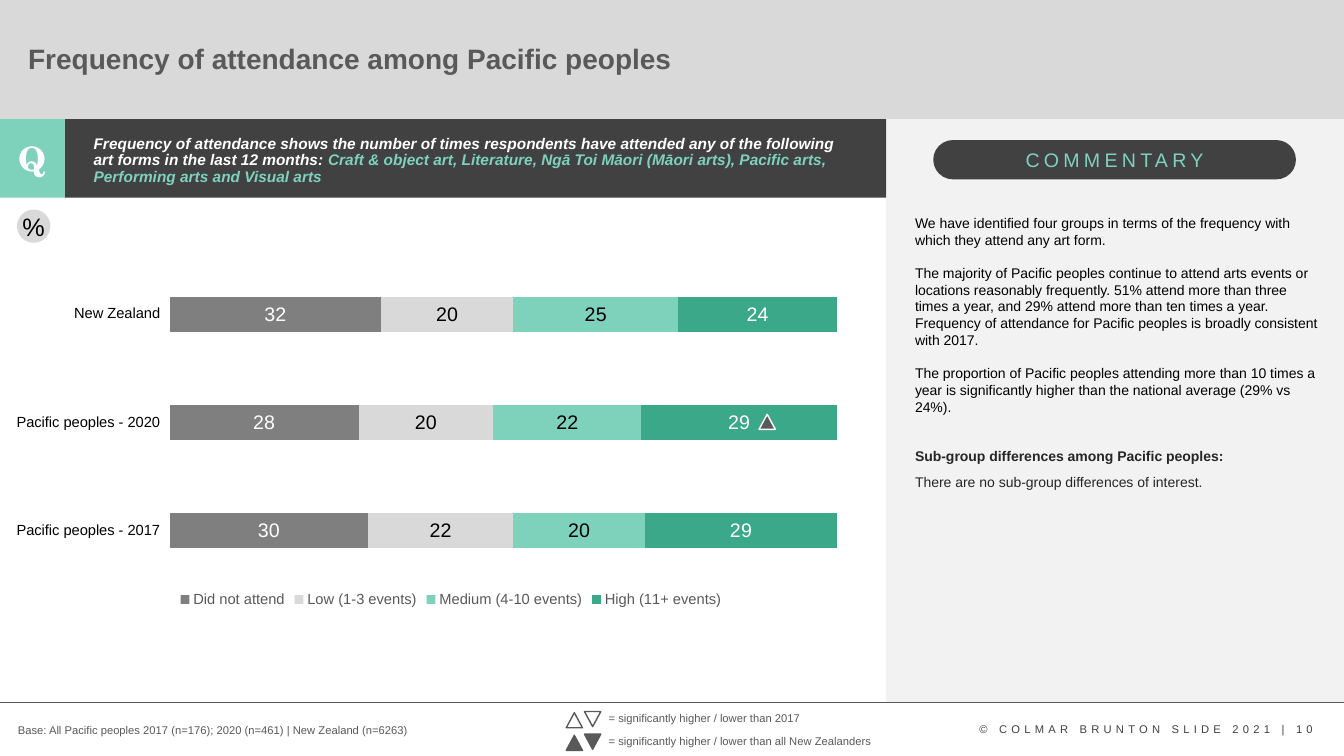
"""Build the slide on frequency of arts attendance among Pacific peoples."""
from dataclasses import dataclass

from lxml import etree
from pptx import Presentation
from pptx.chart.data import CategoryChartData
from pptx.dml.color import RGBColor
from pptx.enum.chart import XL_CHART_TYPE, XL_LABEL_POSITION, XL_LEGEND_POSITION
from pptx.enum.shapes import MSO_CONNECTOR, MSO_SHAPE
from pptx.enum.text import MSO_ANCHOR, PP_ALIGN
from pptx.oxml import parse_xml
from pptx.oxml.ns import nsdecls, qn
from pptx.util import Cm, Pt

RECT, ROUND, OVAL, TRIANGLE = (MSO_SHAPE.RECTANGLE, MSO_SHAPE.ROUNDED_RECTANGLE,
                               MSO_SHAPE.OVAL, MSO_SHAPE.ISOSCELES_TRIANGLE)
LEFT, CENTER, RIGHT = PP_ALIGN.LEFT, PP_ALIGN.CENTER, PP_ALIGN.RIGHT
TOP, MIDDLE = MSO_ANCHOR.TOP, MSO_ANCHOR.MIDDLE


@dataclass(frozen=True)
class Theme:
    """Colours, fonts and type sizes."""
    white: str = "FFFFFF"
    black: str = "000000"
    pale: str = "F2F2F2"
    light: str = "D9D9D9"
    mid: str = "7F7F7F"
    slate: str = "595959"
    dark: str = "414141"
    footer: str = "404040"
    ink: str = "262626"
    mint: str = "7ED2BB"
    green: str = "3AA889"
    sans: str = "Arial"
    serif: str = "TeX Gyre Schola"
    title: float = 20
    badge: float = 24
    percent: float = 18
    value: float = 14
    question: float = 11
    label: float = 10.5
    body: float = 10
    note: float = 8


T = Theme()

TITLE = "Frequency of attendance among Pacific peoples"
QUESTION = ("Frequency of attendance shows the number of times respondents have attended "
            "any of the following art forms in the last 12 months: ")
ART_FORMS = ("Craft & object art, Literature, Ngā Toi Māori (Māori arts), Pacific arts, "
             "Performing arts and Visual arts")
GROUPS = ["New Zealand", "Pacific peoples - 2020", "Pacific peoples - 2017"]
FREQUENCIES = [
    ("Did not attend", (32, 28, 30), T.mid, T.white),
    ("Low (1-3 events)", (20, 20, 22), T.light, T.black),
    ("Medium (4-10 events)", (25, 22, 20), T.mint, T.black),
    ("High (11+ events)", (24, 29, 29), T.green, T.white),
]
COMMENTARY = [
    ("We have identified four groups in terms of the frequency with which they attend any "
     "art form.", 0, T.black, False),
    ("The majority of Pacific peoples continue to attend arts events or locations reasonably "
     "frequently. 51% attend more than three times a year, and 29% attend more than ten times "
     "a year. Frequency of attendance for Pacific peoples is broadly consistent with 2017.",
     11.5, T.black, False),
    ("The proportion of Pacific peoples attending more than 10 times a year is significantly "
     "higher than the national average (29% vs 24%).", 11.5, T.black, False),
    ("Sub-group differences among Pacific peoples:", 23.5, T.ink, True),
    ("There are no sub-group differences of interest.", 6, T.ink, False),
]
BASE = "Base: All Pacific peoples 2017 (n=176); 2020 (n=461) | New Zealand (n=6263)"
SIGNIFICANCE = [
    ("= significantly higher / lower than 2017", T.white),
    ("= significantly higher / lower than all New Zealanders", T.slate),
]
COPYRIGHT = "© COLMAR BRUNTON SLIDE 2021 | 10"

WIDTH, HEIGHT = 33.87, 19.05
HEADER_BOTTOM, FOOTER_TOP = 3.0, 17.7
BADGE_WIDTH, BAND_HEIGHT, PANEL_LEFT = 1.63, 1.98, 22.33
ROW_HEIGHTS = (2.79, 2.72, 2.72)
MARK_SIZE, MARK_GAP, NOTE_PITCH = (0.41, 0.38), 0.46, 0.57


def style(font, color, size, name=T.sans, **extra):
    font.color.rgb = RGBColor.from_string(color)
    for attribute, value in {"size": Pt(size), "name": name, **extra}.items():
        setattr(font, attribute, value)


def write(paragraph, text, color, size, spacing=None, **extra):
    run = paragraph.add_run()
    run.text = text
    style(run.font, color, size, **extra)
    if spacing:
        run._r.get_or_add_rPr().set("spc", str(spacing * 100))


def no_insets(holder):
    for side in ("left", "top", "right", "bottom"):
        setattr(holder, f"margin_{side}", 0)


def add_block(slide, kind, box, fill, line=None):
    block = slide.shapes.add_shape(kind, *map(Cm, box))
    block.shadow.inherit = False
    block.fill.solid()
    block.fill.fore_color.rgb = RGBColor.from_string(fill)
    if line:
        block.line.color.rgb = RGBColor.from_string(line)
        block.line.width = Pt(1)
    else:
        block.line.fill.background()
    return block


def add_badge(slide, kind, box, fill, text, color, size, **extra):
    badge = add_block(slide, kind, box, fill)
    no_insets(badge.text_frame)
    badge.text_frame.vertical_anchor = MIDDLE
    badge.text_frame.word_wrap = False
    paragraph = badge.text_frame.paragraphs[0]
    paragraph.alignment = CENTER
    write(paragraph, text, color, size, **extra)
    return badge


def add_frame(slide, box, anchor=TOP, wrap=True):
    frame = slide.shapes.add_textbox(*map(Cm, box)).text_frame
    frame.word_wrap = wrap
    frame.vertical_anchor = anchor
    return frame


def add_frequency_chart(slide):
    data = CategoryChartData(number_format="0")
    data.categories = GROUPS[::-1]
    for name, values, _, _ in FREQUENCIES:
        data.add_series(name, values[::-1])
    chart = slide.shapes.add_chart(XL_CHART_TYPE.BAR_STACKED_100,
                                   *map(Cm, (1.04, 5.23, 20.65, 10.19)), data).chart
    style(chart.font, T.black, T.body)
    chart.has_title = False
    chart.has_legend = True
    chart.legend.position = XL_LEGEND_POSITION.BOTTOM
    chart.legend.include_in_layout = False
    style(chart.legend.font, T.slate, T.label)
    for axis in (chart.category_axis, chart.value_axis):
        axis.has_major_gridlines = False
        axis.visible = False
    plot = chart.plots[0]
    plot.gap_width, plot.overlap, plot.vary_by_categories = 213, 100, False
    for series, (_, _, fill, ink) in zip(plot.series, FREQUENCIES):
        series.format.fill.solid()
        series.format.fill.fore_color.rgb = RGBColor.from_string(fill)
        labels = series.data_labels
        labels.show_value = True
        labels.position = XL_LABEL_POSITION.CENTER
        style(labels.font, ink, T.value)
    area = chart._chartSpace.chart.plotArea
    for layout in area.findall(qn("c:layout")):
        area.remove(layout)
    places = {"layoutTarget": "inner", "xMode": "edge", "yMode": "edge",
              "x": 0.157, "y": 0.131, "w": 0.814, "h": 0.801}
    entries = "".join(f'<c:{key} val="{value}"/>' for key, value in places.items())
    area.insert(0, parse_xml(f'<c:layout {nsdecls("c")}><c:manualLayout>{entries}'
                             '</c:manualLayout></c:layout>'))


def add_group_labels(slide):
    table = slide.shapes.add_table(len(GROUPS), 1, *map(
        Cm, (0.2, 6.5, 3.84, sum(ROW_HEIGHTS)))).table
    table.first_row = table.horz_banding = False
    for row, height, group in zip(table.rows, ROW_HEIGHTS, GROUPS):
        row.height = Cm(height)
        cell = row.cells[0]
        cell.fill.background()
        no_insets(cell)
        cell.vertical_anchor = MIDDLE
        paragraph = cell.text_frame.paragraphs[0]
        paragraph.alignment = RIGHT
        write(paragraph, group, T.black, T.label)


def add_significance_key(slide):
    for index, (text, fill) in enumerate(SIGNIFICANCE):
        top = 17.81 + index * NOTE_PITCH
        frame = add_frame(slide, (15.09, top, 7.2, 0.61), wrap=False)
        write(frame.paragraphs[0], text, T.slate, T.note)
        for step, (drop, turn) in enumerate(((0.15, 0), (0.12, 180))):
            mark = add_block(slide, TRIANGLE, (14.27 + step * MARK_GAP, top + drop, *MARK_SIZE),
                             fill, T.slate)
            mark.rotation = turn


def main():
    deck = Presentation()
    deck.slide_width, deck.slide_height = Cm(WIDTH), Cm(HEIGHT)
    slide = deck.slides.add_slide(deck.slide_layouts[6])

    add_block(slide, RECT, (0, 0, WIDTH, HEADER_BOTTOM), T.light)
    add_block(slide, RECT, (PANEL_LEFT, HEADER_BOTTOM, WIDTH - PANEL_LEFT,
                            FOOTER_TOP - HEADER_BOTTOM), T.pale)
    add_block(slide, RECT, (BADGE_WIDTH, HEADER_BOTTOM, PANEL_LEFT - BADGE_WIDTH, BAND_HEIGHT),
              T.dark)
    rule = slide.shapes.add_connector(MSO_CONNECTOR.STRAIGHT, *map(
        Cm, (0, FOOTER_TOP, WIDTH, FOOTER_TOP)))
    rule.line.color.rgb = RGBColor.from_string(T.slate)
    rule.line.width = Pt(0.5)
    etree.SubElement(rule._element.spPr, qn("a:effectLst"))

    add_badge(slide, RECT, (0, HEADER_BOTTOM, BADGE_WIDTH, BAND_HEIGHT), T.mint,
              "Q", T.white, T.badge, name=T.serif, bold=True)
    pill = add_badge(slide, ROUND, (23.52, 3.53, 9.14, 0.99), T.dark,
                     "COMMENTARY", T.mint, T.value, spacing=3)
    pill.adjustments[0] = 0.5

    title = add_frame(slide, (0.46, 0.53, 28.42, 1.98), MIDDLE).paragraphs[0]
    title.line_spacing = 0.9
    write(title, TITLE, T.slate, T.title, bold=True)
    question = add_frame(slide, (2.11, 3.3, 19.3, 1.17)).paragraphs[0]
    question.line_spacing = 0.9
    for text, color in ((QUESTION, T.white), (ART_FORMS, T.mint)):
        write(question, text, color, T.question, bold=True, italic=True)

    add_frequency_chart(slide)
    add_group_labels(slide)
    add_badge(slide, OVAL, (0.43, 5.28, 0.84, 0.84), T.light, "%", T.black, T.percent)
    add_block(slide, TRIANGLE, (19.13, 10.44, *MARK_SIZE), T.slate, T.white)

    commentary = add_frame(slide, (22.81, 5.28, 10.64, 7.75))
    for index, (text, gap, color, bold) in enumerate(COMMENTARY):
        paragraph = commentary.add_paragraph() if index else commentary.paragraphs[0]
        if gap:
            paragraph.space_before = Pt(gap)
        write(paragraph, text, color, T.body, bold=bold)

    base = add_frame(slide, (0.2, 18.11, 13.08, 0.61))
    write(base.paragraphs[0], BASE, T.slate, T.note)
    add_significance_key(slide)
    credit = add_frame(slide, (24.43, 18.08, 9.17, 0.61))
    write(credit.paragraphs[0], COPYRIGHT, T.footer, T.note, spacing=3)
    deck.save("out.pptx")


if __name__ == "__main__":
    main()
